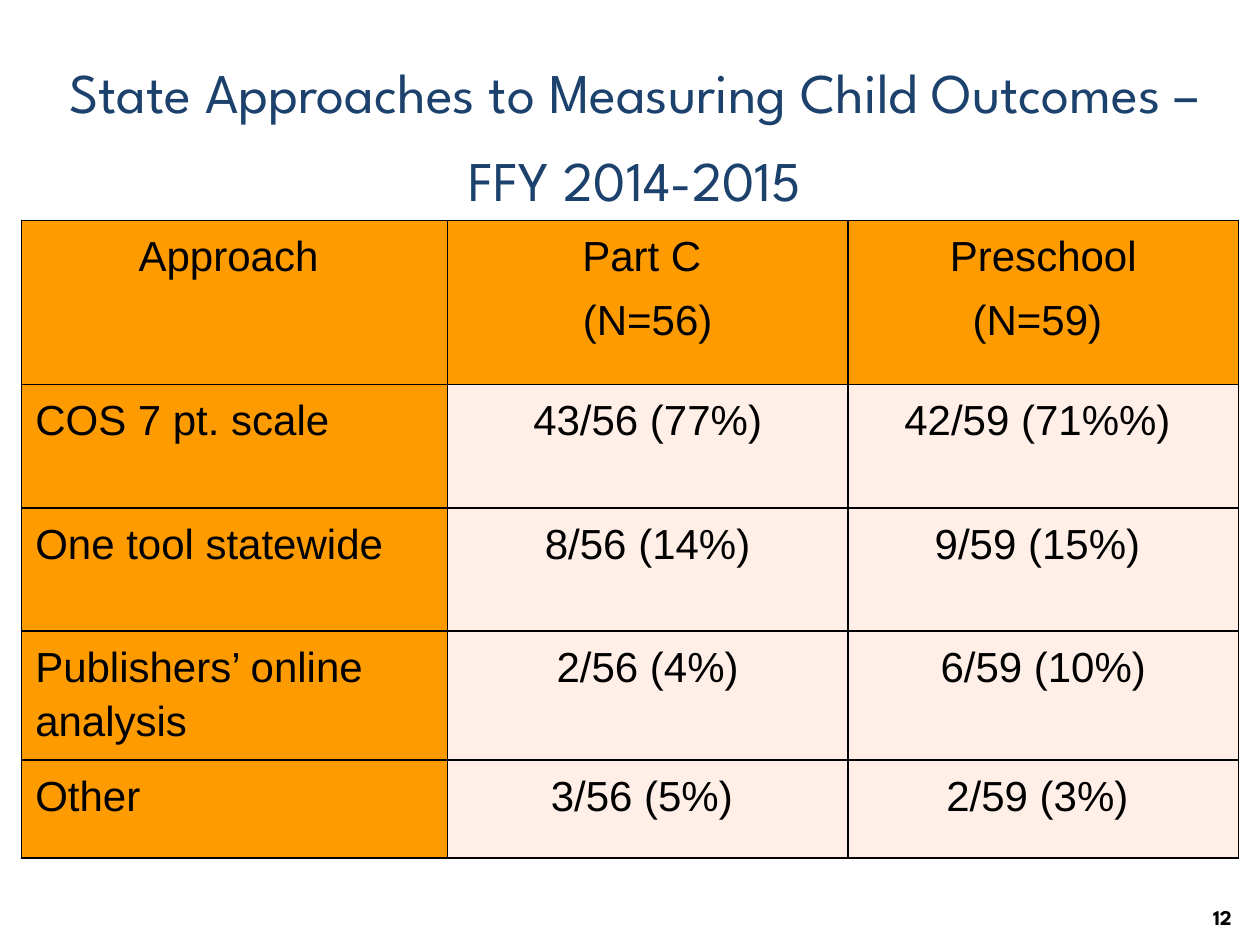
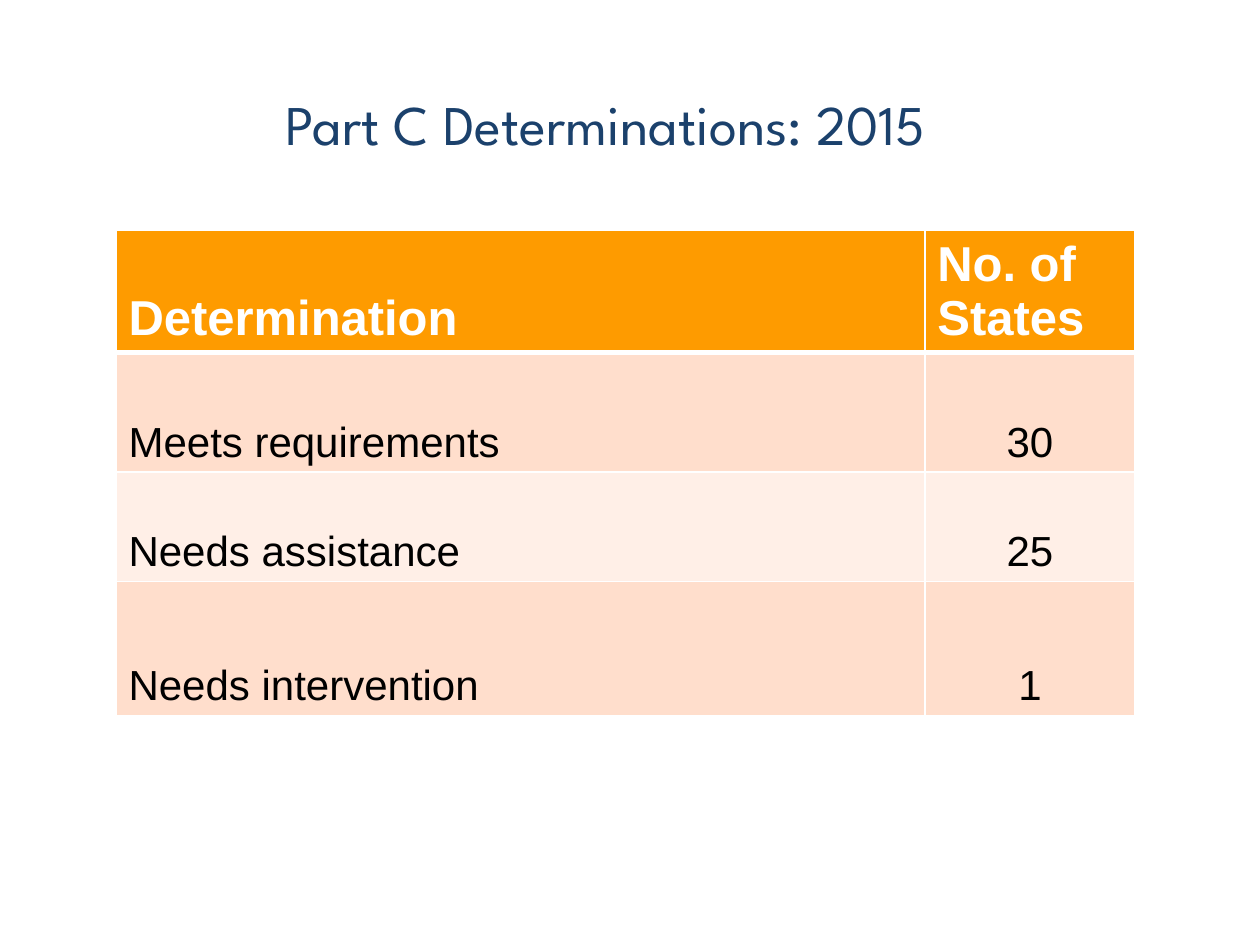
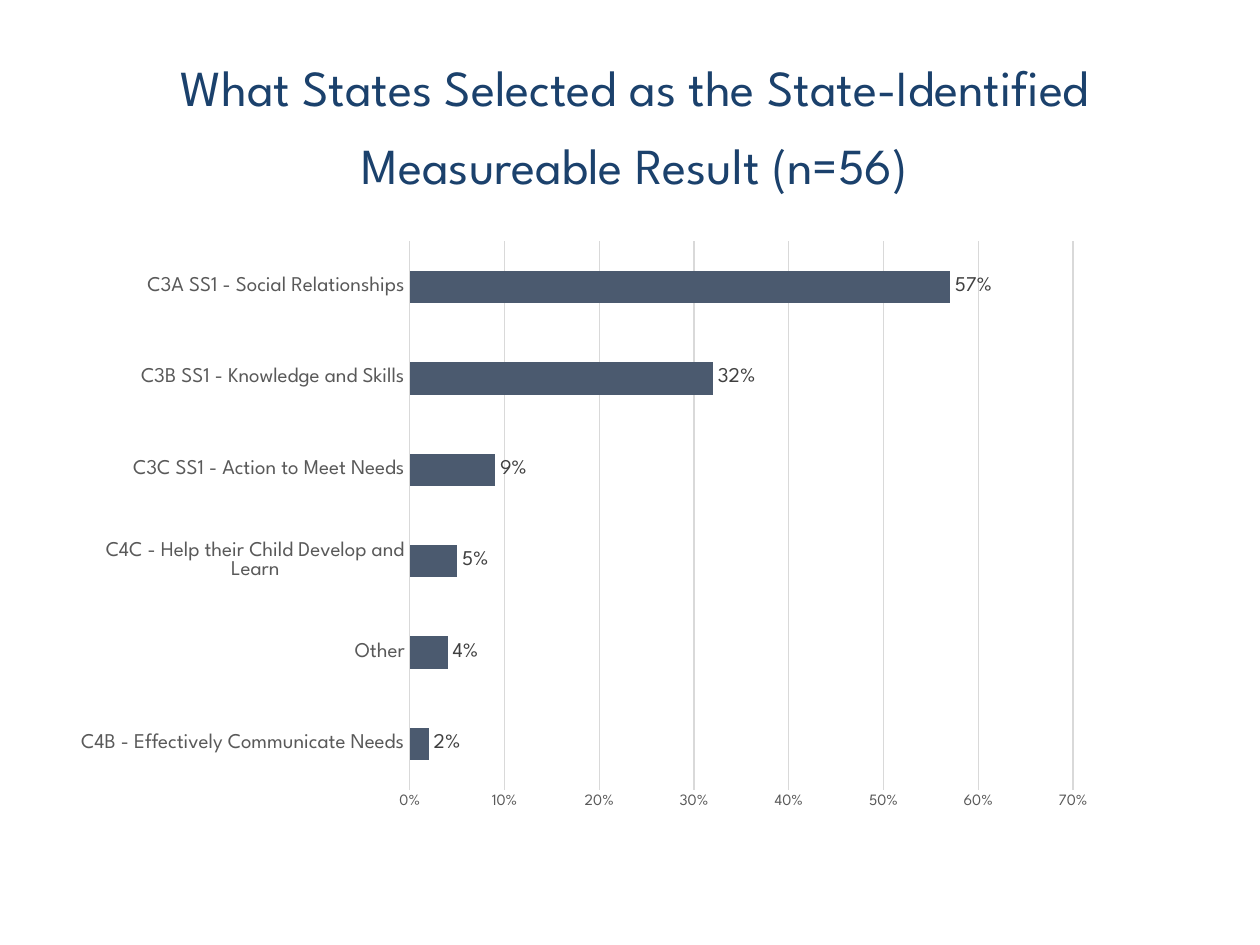
from lxml import etree
from pptx import Presentation
from pptx.chart.data import CategoryChartData
from pptx.dml.color import RGBColor
from pptx.enum import chart as ch, text as tx
from pptx.oxml import parse_xml
from pptx.oxml.ns import nsdecls, qn
from pptx.util import Inches, Pt

COLORS = {
    "title": "1B416C", "orange": "FE9B00", "peach": "FFDECC", "cream": "FFEFE7",
    "black": "000000", "white": "FFFFFF", "bar": "4B5A6F",
    "grid": "D9D9D9", "axis": "595959", "label": "404040",
}
HEADING_FONT, TABLE_FONT = "League Spartan", "Arial"
HEADING_SPACING = 1.3

APPROACHES = {
    "title": "State Approaches to Measuring Child Outcomes – FFY 2014-2015",
    "page": "12",
    "columns": [3.38, 3.18, 3.1],
    "heights": [1.3, 0.98, 0.98, 0.98, 0.78],
    "rows": [
        ("Approach ", "Part C \n(N=56)", "Preschool\n(N=59) "),
        ("COS 7 pt. scale", "43/56 (77%)", "42/59 (71%%) "),
        ("One tool statewide", "8/56 (14%)", "9/59 (15%) "),
        ("Publishers’ online analysis", "2/56 (4%)", "6/59 (10%)"),
        ("Other", "3/56 (5%) ", "2/59 (3%) "),
    ],
}
DETERMINATIONS = {
    "title": "Part C Determinations: 2015",
    "columns": [6.42, 1.67],
    "heights": [0.67, 0.95, 0.87, 1.06],
    "rows": [
        ("Determination", "No. of States"),
        ("Meets requirements", "30"),
        ("Needs assistance", "25"),
        ("Needs intervention", "1"),
    ],
}
RESULTS = {
    "title": "What States Selected as the State-Identified Measureable Result (n=56)",
    "shares": [
        ("C4B - Effectively Communicate Needs", 0.02),
        ("Other", 0.04),
        ("C4C - Help their Child Develop and Learn", 0.05),
        ("C3C SS1 - Action to Meet Needs", 0.09),
        ("C3B SS1 - Knowledge and Skills", 0.32),
        ("C3A SS1 - Social Relationships", 0.57),
    ],
    "plot": {"x": 0.324, "y": 0.034, "w": 0.638, "h": 0.902},
}


def rgb(name):
    return RGBColor.from_string(COLORS[name])


def style(font, size, color, face=HEADING_FONT, bold=False):
    font.size, font.name, font.bold = Pt(size), face, bold
    font.color.rgb = rgb(color)


def place(shape, *box):
    shape.left, shape.top, shape.width, shape.height = map(Inches, box)


def add_titled_slide(deck, title, box, size=32):
    slide = deck.slides.add_slide(deck.slide_layouts[5])
    place(slide.shapes.title, *box)
    frame = slide.shapes.title.text_frame
    frame.text = title
    frame.auto_size = tx.MSO_AUTO_SIZE.NONE
    frame.vertical_anchor = tx.MSO_ANCHOR.TOP
    heading = frame.paragraphs[0]
    heading.alignment = tx.PP_ALIGN.CENTER
    heading.line_spacing = HEADING_SPACING
    style(heading.runs[0].font, size, "title")
    return slide


def add_page_number(slide, number):
    frame = slide.shapes.add_textbox(*map(Inches, (9.53, 7.07, 0.5, 0.4))).text_frame
    frame.word_wrap = True
    frame.text = number
    frame.paragraphs[0].line_spacing = HEADING_SPACING
    style(frame.paragraphs[0].runs[0].font, 12, "black", bold=True)


def add_grid(slide, content, left, top):
    """Add a plain table holding the content's rows and return it."""
    rows, columns, heights = content["rows"], content["columns"], content["heights"]
    size = (left, top, sum(columns), sum(heights))
    table = slide.shapes.add_table(len(rows), len(columns), *map(Inches, size)).table
    table.first_row = table.horz_banding = False
    for column, width in zip(table.columns, columns):
        column.width = Inches(width)
    for row, height, words in zip(table.rows, heights, rows):
        row.height = Inches(height)
        for cell, wording in zip(row.cells, words):
            cell.text_frame.text = wording
    return table


def set_borders(cell, color, **widths):
    """Draw the four sides 1 point wide, unless a side's width is given."""
    properties = cell._tc.get_or_add_tcPr()
    for side in "LRTB":
        properties.append(parse_xml(
            f'<a:ln{side} {nsdecls("a")} w="{Pt(widths.get(side, 1))}"><a:solidFill>'
            f'<a:srgbClr val="{COLORS[color]}"/></a:solidFill></a:ln{side}>'))


def finish_cell(cell, fill, size, color, centered, bold=False):
    cell.fill.solid()
    cell.fill.fore_color.rgb = rgb(fill)
    for paragraph in cell.text_frame.paragraphs:
        paragraph.alignment = tx.PP_ALIGN.CENTER if centered else tx.PP_ALIGN.LEFT
        for run in paragraph.runs:
            style(run.font, size, color, TABLE_FONT, bold)


def build_approaches(deck):
    slide = add_titled_slide(deck, APPROACHES["title"], (0.25, 0.25, 9.58, 1.25))
    add_page_number(slide, APPROACHES["page"])
    table = add_grid(slide, APPROACHES, 0.17, 1.75)
    for r, row in enumerate(table.rows):
        for c, cell in enumerate(row.cells):
            set_borders(cell, "black")
            cell.margin_left = cell.margin_right = Inches(0.11)
            heading = r == 0 or c == 0
            finish_cell(cell, "orange" if heading else "cream", 24, "black", r == 0 or c > 0)
            for p, paragraph in enumerate(cell.text_frame.paragraphs):
                paragraph.line_spacing = 1.15
                paragraph.space_before = Pt(5.8 if p else 0)


def build_determinations(deck):
    slide = add_titled_slide(deck, DETERMINATIONS["title"], (0.02, 0.5, 9.58, 0.83))
    table = add_grid(slide, DETERMINATIONS, 0.92, 1.83)
    for r, row in enumerate(table.rows):
        for c, cell in enumerate(row.cells):
            cell.vertical_anchor = tx.MSO_ANCHOR.BOTTOM
            if r == 0:
                set_borders(cell, "white", B=3)
                finish_cell(cell, "orange", 28, "white", False, bold=True)
            else:
                set_borders(cell, "white", T=3 if r == 1 else 1)
                finish_cell(cell, "peach" if r % 2 else "cream", 24, "black", c > 0)


def set_inner_plot(chart, plot):
    area = chart._chartSpace.chart.plotArea
    for old in area.findall(qn("c:layout")):
        area.remove(old)
    layout = etree.Element(qn("c:layout"))
    manual = etree.SubElement(layout, qn("c:manualLayout"))
    settings = {"layoutTarget": "inner", "xMode": "edge", "yMode": "edge", **plot}
    for tag, value in settings.items():
        etree.SubElement(manual, qn(f"c:{tag}")).set("val", str(value))
    area.insert(0, layout)


def build_results(deck):
    slide = add_titled_slide(deck, RESULTS["title"], (0.25, 0.25, 9.58, 0.83), 28.8)
    data = CategoryChartData(number_format="0%")
    data.categories = [name for name, _ in RESULTS["shares"]]
    data.add_series("Series 1", [share for _, share in RESULTS["shares"]])
    box = map(Inches, (0.58, 1.75, 8.25, 4.83))
    chart = slide.shapes.add_chart(ch.XL_CHART_TYPE.BAR_CLUSTERED, *box, data).chart
    chart.has_legend = chart.has_title = False
    style(chart.font, 10, "black")
    set_inner_plot(chart, RESULTS["plot"])

    bars = chart.plots[0]
    bars.gap_width = 182
    bars.vary_by_categories = False
    bars.series[0].format.fill.solid()
    bars.series[0].format.fill.fore_color.rgb = rgb("bar")
    bars.has_data_labels = True
    labels = bars.data_labels
    labels.show_value = True
    labels.position = ch.XL_LABEL_POSITION.OUTSIDE_END
    labels.number_format, labels.number_format_is_linked = "0%", False
    style(labels.font, 12, "label")

    names, shares = chart.category_axis, chart.value_axis
    for axis, size in ((names, 12), (shares, 9)):
        axis.major_tick_mark = axis.minor_tick_mark = ch.XL_TICK_MARK.NONE
        style(axis.tick_labels.font, size, "axis")
    shares.minimum_scale, shares.maximum_scale, shares.major_unit = 0, 0.7, 0.1
    shares.tick_labels.number_format = "0%"
    shares.tick_labels.number_format_is_linked = False
    shares.format.line.fill.background()
    shares.has_major_gridlines = True
    for line in (names.format.line, shares.major_gridlines.format.line):
        line.color.rgb = rgb("grid")
        line.width = Pt(0.75)


def main():
    deck = Presentation()
    deck.slide_width, deck.slide_height = Inches(10), Inches(7.5)
    build_approaches(deck)
    build_determinations(deck)
    build_results(deck)
    deck.save("out.pptx")


if __name__ == "__main__":
    main()
